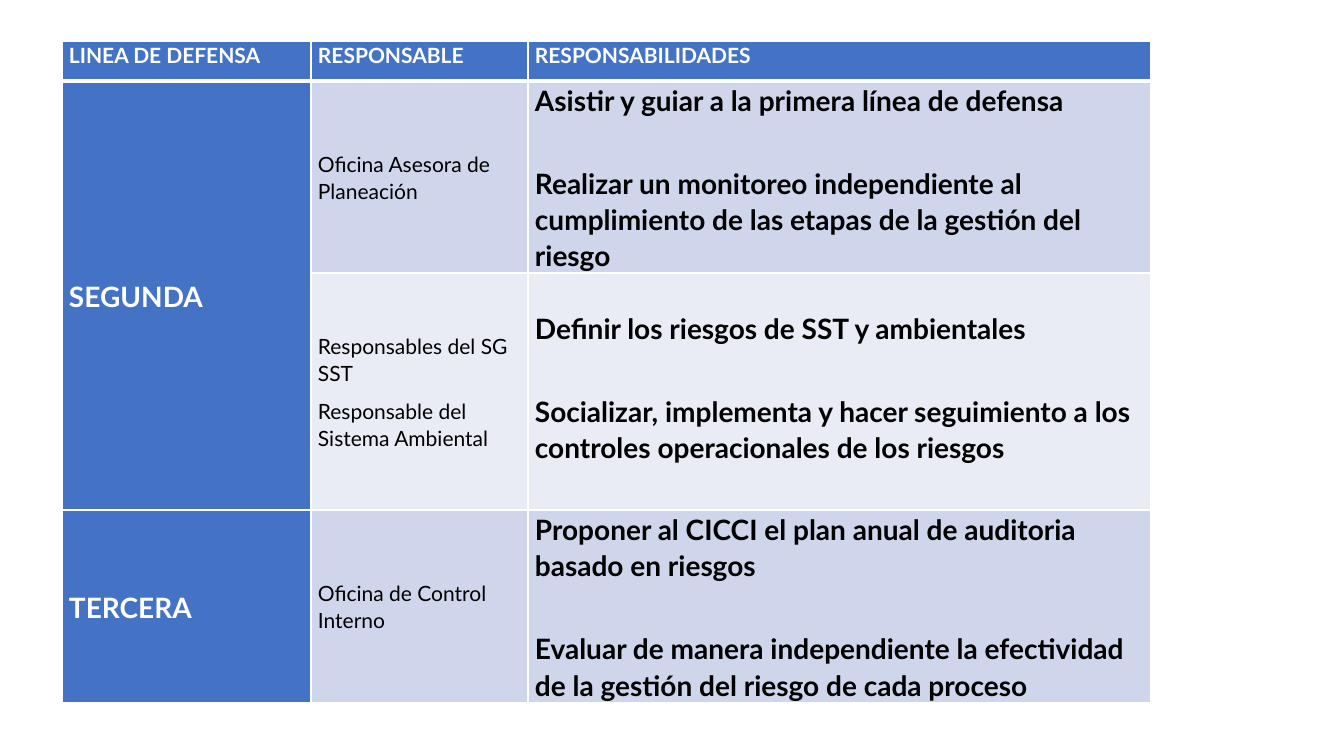
from lxml.etree import SubElement
from pptx import Presentation
from pptx.dml.color import RGBColor as Rgb
from pptx.enum.text import MSO_ANCHOR as Anchor
from pptx.oxml.ns import qn
from pptx.util import Pt

PX = 914400 / 100.8
FONT = "Lato"
COLORS = {"blue": "4472C4", "band": "CFD5EA", "light": "E9EBF5",
          "white": "FFFFFF", "black": "000000"}

COLUMNS = [249, 217, 623]
ROWS = [40, 191, 237, 191]
BANDS = ["band", "light", "band"]
HEADERS = ["LINEA DE DEFENSA", "RESPONSABLE", "RESPONSABILIDADES"]
LINES = {1: "SEGUNDA", 3: "TERCERA"}
OWNERS = [
    ["Oficina Asesora de Planeación"],
    ["Responsables del SG SST", "Responsable del Sistema Ambiental"],
    ["Oficina de Control Interno"],
]
DUTIES = [
    ["Asistir y guiar a la primera línea de defensa",
     "Realizar un monitoreo independiente al cumplimiento de las etapas "
     "de la gestión del riesgo"],
    ["Definir los riesgos de SST y ambientales",
     "Socializar, implementa y hacer seguimiento a los controles "
     "operacionales de los riesgos"],
    ["Proponer al CICCI el plan anual de auditoria basado en riesgos",
     "Evaluar de manera independiente la efectividad de la gestión del "
     "riesgo de cada proceso"],
]


def px(length):
    return round(length * PX)


def add_borders(cell, top, bottom):
    """White borders, with the top and bottom widths in points."""
    properties = cell._tc.get_or_add_tcPr()
    for side, width in (("L", 1), ("R", 1), ("T", top), ("B", bottom)):
        line = SubElement(properties, qn(f"a:ln{side}"), w=str(Pt(width)))
        fill = SubElement(line, qn("a:solidFill"))
        SubElement(fill, qn("a:srgbClr"), val=COLORS["white"])


def style_cell(cell, fill, top=1, bottom=1):
    add_borders(cell, top, bottom)
    cell.fill.solid()
    cell.fill.fore_color.rgb = Rgb.from_string(COLORS[fill])
    cell.margin_left = cell.margin_right = px(7)
    cell.margin_top = cell.margin_bottom = 0


def write_cell(cell, texts, size, color, bold, anchor=Anchor.MIDDLE, gap=8):
    """One paragraph per text, with gap points between them."""
    cell.vertical_anchor = anchor
    cell.text_frame.text = "\n".join(texts)
    paragraphs = cell.text_frame.paragraphs
    for para in paragraphs:
        para.line_spacing = 1.07
        para.space_after = Pt(8 if para is paragraphs[-1] else gap)
        for span in para.runs:
            span.font.name = FONT
            span.font.size = Pt(size)
            span.font.bold = bold
            span.font.color.rgb = Rgb.from_string(COLORS[color])


def add_defense_table(page):
    frame = page.shapes.add_table(len(ROWS), len(COLUMNS), px(62), px(41),
                                  px(sum(COLUMNS)), px(sum(ROWS)))
    table = frame.table
    table.horz_banding = False
    for column, width in zip(table.columns, COLUMNS):
        column.width = px(width)
    for row, height in zip(table.rows, ROWS):
        row.height = px(height)
    return table


def main():
    deck = Presentation()
    deck.slide_width, deck.slide_height = px(1344), px(756)
    page = deck.slides.add_slide(deck.slide_layouts[6])
    table = add_defense_table(page)

    # Header row
    for index, header in enumerate(HEADERS):
        cell = table.cell(0, index)
        style_cell(cell, "blue", bottom=3)
        write_cell(cell, [header], 15, "white", True, Anchor.TOP)

    # Owners and their duties
    for index, (band, owners, duties) in enumerate(zip(BANDS, OWNERS, DUTIES), 1):
        line, owner, duty = (table.cell(index, column) for column in range(3))
        top = 3 if index == 1 else 1
        for cell, fill in ((line, "blue"), (owner, band), (duty, band)):
            style_cell(cell, fill, top)
        write_cell(owner, owners, 15, "black", False)
        write_cell(duty, duties, 20, "black", True, Anchor.TOP, gap=34)
    table.cell(2, 2).margin_top = px(36)

    # Lines of defense
    table.cell(1, 0).merge(table.cell(2, 0))
    for index, name in LINES.items():
        write_cell(table.cell(index, 0), [name], 20, "white", True)

    deck.save("out.pptx")


if __name__ == "__main__":
    main()
